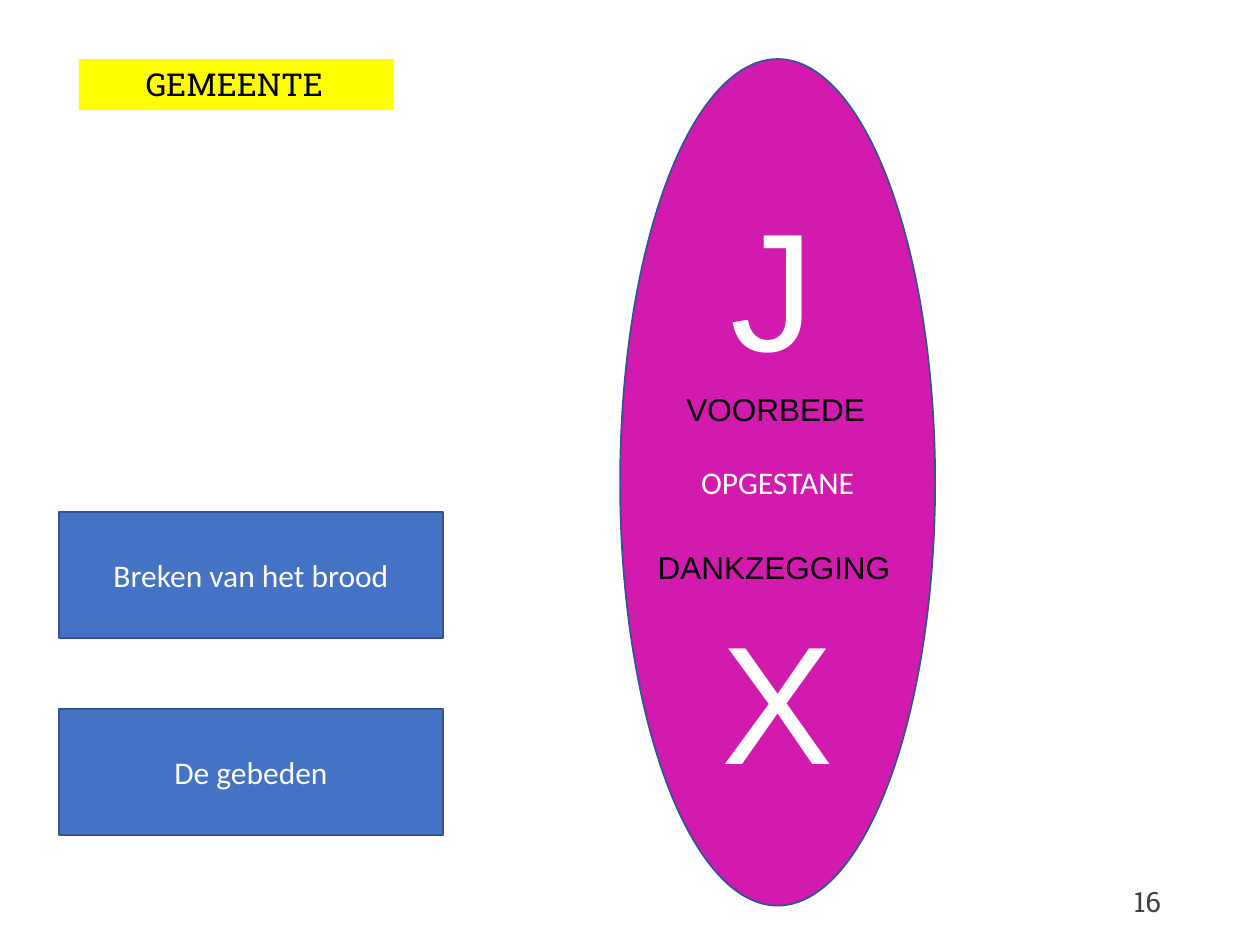
import pptx
import pptx.util
import pptx.dml.color
import pptx.enum.shapes
import pptx.enum.text

SHAPE = pptx.enum.shapes.MSO_SHAPE
ALIGN = pptx.enum.text.PP_ALIGN
ANCHOR = pptx.enum.text.MSO_ANCHOR
COLORS = {
    "blue": "4472C4",
    "outline": "325491",
    "yellow": "FFFF00",
    "magenta": "D21AAF",
    "white": "FFFFFF",
    "black": "000000",
    "gray": "424242",
}

deck = pptx.Presentation()
deck.slide_width = pptx.util.Inches(10)
deck.slide_height = pptx.util.Inches(7.5)
unit = deck.slide_width / 64
page = deck.slides.add_slide(deck.slide_layouts[5])


def grid(*cells):
    return [round(cell * unit) for cell in cells]


def write(box, text, font, size, color, align, anchor, indent=0.1):
    frame = box.text_frame
    frame.word_wrap = True
    frame.auto_size = pptx.enum.text.MSO_AUTO_SIZE.NONE
    frame.vertical_anchor = anchor
    frame.margin_left = pptx.util.Inches(indent)
    frame.text = text
    para = frame.paragraphs[0]
    para.alignment = align
    span = para.runs[0]
    span.font.name = font
    span.font.size = pptx.util.Pt(size)
    span.font.color.rgb = pptx.dml.color.RGBColor.from_string(COLORS[color])


title = page.shapes.title
title.left, title.top, title.width, title.height = grid(4, 3, 16, 2.6)
title.fill.solid()
title.fill.fore_color.rgb = pptx.dml.color.RGBColor.from_string(COLORS["yellow"])
write(title, "GEMEENTE", "Roboto Slab", 18, "black", ALIGN.LEFT, ANCHOR.TOP, 0.53)

figures = [
    ("Breken van het brood", SHAPE.RECTANGLE, "blue", (3, 26, 19.5, 6.4)),
    ("De gebeden", SHAPE.RECTANGLE, "blue", (3, 36, 19.5, 6.4)),
    ("OPGESTANE", SHAPE.OVAL, "magenta", (31.5, 3, 16, 43)),
]
for text, kind, fill, cells in figures:
    figure = page.shapes.add_shape(kind, *grid(*cells))
    figure.shadow.inherit = False
    figure.fill.solid()
    figure.fill.fore_color.rgb = pptx.dml.color.RGBColor.from_string(COLORS[fill])
    figure.line.color.rgb = pptx.dml.color.RGBColor.from_string(COLORS["outline"])
    figure.line.width = pptx.util.Pt(1)
    write(figure, text, "Calibri", 18, "white", ALIGN.CENTER, ANCHOR.MIDDLE)

labels = [
    ("DANKZEGGING", 18, "black", 0.22, (32, 27.5, 16, 2.6)),
    ("J", 96, "white", 0.1, (36.5, 9, 7, 11)),
    ("X", 96, "white", 0.1, (36, 30, 9, 11)),
    ("VOORBEDE", 18, "black", 0.37, (32.5, 19.5, 15.4, 2.6)),
]
for text, size, color, indent, cells in labels:
    label = page.shapes.add_textbox(*grid(*cells))
    write(label, text, "Arial", size, color, ALIGN.LEFT, ANCHOR.TOP, indent)

number = page.shapes.add_textbox(*grid(45.2, 44.5, 14.4, 2.6))
write(number, "16", "Roboto Slab", 16, "gray", ALIGN.RIGHT, ANCHOR.MIDDLE)

deck.save("out.pptx")
